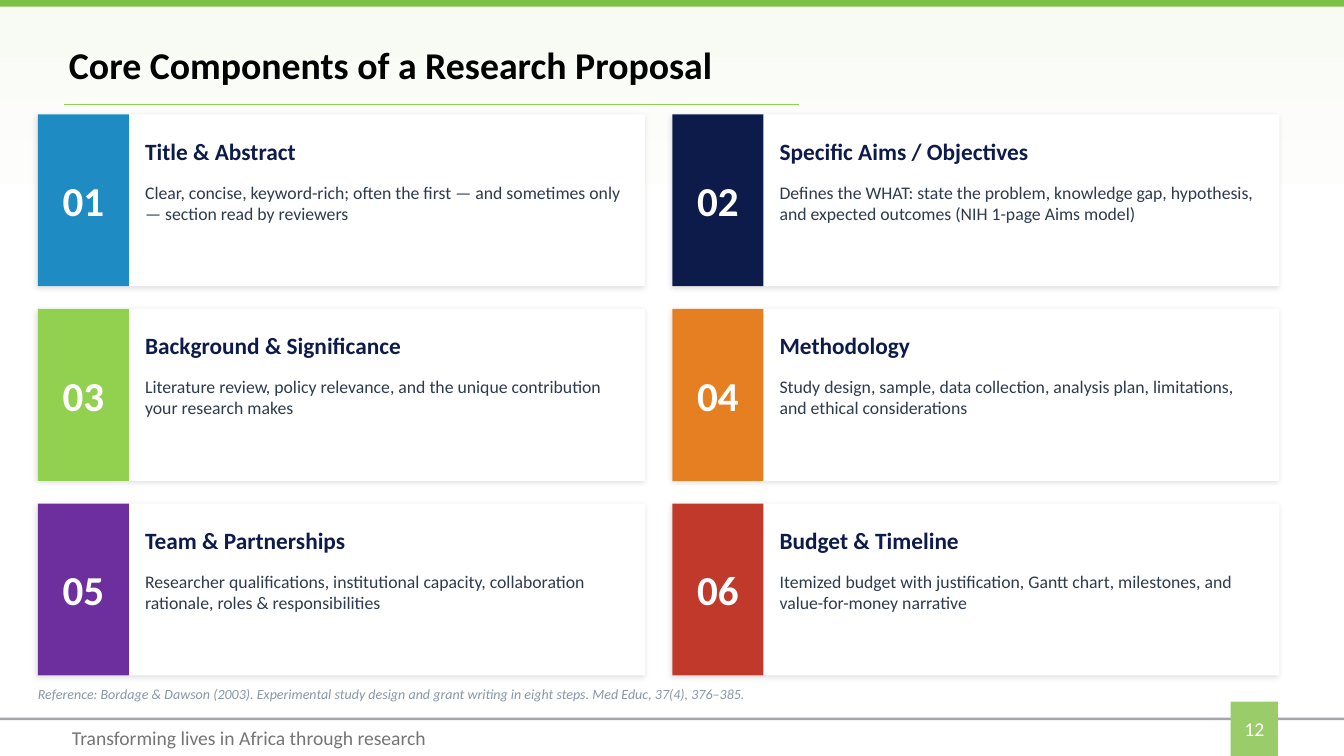
from lxml import etree
from pptx import Presentation
from pptx.dml.color import RGBColor
from pptx.enum.shapes import MSO_CONNECTOR, MSO_SHAPE
from pptx.enum.text import MSO_ANCHOR, PP_ALIGN
from pptx.oxml.ns import qn
from pptx.util import Inches, Pt

RECTANGLE = MSO_SHAPE.RECTANGLE
STRAIGHT = MSO_CONNECTOR.STRAIGHT
TOP, MIDDLE = MSO_ANCHOR.TOP, MSO_ANCHOR.MIDDLE
LEFT, CENTER = PP_ALIGN.LEFT, PP_ALIGN.CENTER

FONT = "Calibri"
SLIDE_WIDTH, SLIDE_HEIGHT = 26.67, 15
GRID_LEFT, GRID_TOP = 0.75, 2.27
COLUMN_PITCH, ROW_PITCH = 12.59, 3.86
CARD_WIDTH, CARD_HEIGHT = 12.05, 3.41
TILE_WIDTH = 1.81
TEXT_OFFSET, TEXT_WIDTH = 2.13, 9.6
PADDING = (0.1, 0.05)

COLORS = {
    "white": "FFFFFF",
    "black": "000000",
    "tint": "F8FBF4",
    "top_bar": "7BC148",
    "rule": "92D050",
    "footer_rule": "A6A4A9",
    "footer_text": "757575",
    "page_tile": "9ACD69",
    "heading": "0D1B4B",
    "body": "2E3A4E",
    "reference": "8896A8",
    "blue": "1E8BC3",
    "navy": "0D1B4B",
    "green": "92D050",
    "orange": "E67E22",
    "purple": "6D2E9E",
    "red": "C0392B",
}

CARDS = [
    ("Title & Abstract", "blue",
     "Clear, concise, keyword-rich; often the first — and sometimes only — section read by reviewers"),
    ("Specific Aims / Objectives", "navy",
     "Defines the WHAT: state the problem, knowledge gap, hypothesis, "
     "and expected outcomes (NIH 1-page Aims model)"),
    ("Background & Significance", "green",
     "Literature review, policy relevance, and the unique contribution your research makes"),
    ("Methodology", "orange",
     "Study design, sample, data collection, analysis plan, limitations, and ethical considerations"),
    ("Team & Partnerships", "purple",
     "Researcher qualifications, institutional capacity, collaboration rationale, "
     "roles & responsibilities"),
    ("Budget & Timeline", "red",
     "Itemized budget with justification, Gantt chart, milestones, and value-for-money narrative"),
]


def rgb(name):
    return RGBColor.from_string(COLORS[name])


def add_box(shapes, left, top, width, height, color):
    shape = shapes.add_shape(RECTANGLE, Inches(left), Inches(top), Inches(width), Inches(height))
    shape.shadow.inherit = False
    shape.fill.solid()
    shape.fill.fore_color.rgb = rgb(color)
    shape.line.fill.background()
    return shape


def write(shape, text, size, color, bold=False, italic=False,
          align=LEFT, anchor=MIDDLE, padding=(0, 0)):
    """Set the single paragraph of a shape; padding is horizontal, vertical."""
    frame = shape.text_frame
    frame.word_wrap = True
    frame.vertical_anchor = anchor
    frame.margin_left = frame.margin_right = Inches(padding[0])
    frame.margin_top = frame.margin_bottom = Inches(padding[1])
    paragraph = frame.paragraphs[0]
    paragraph.alignment = align
    run = paragraph.add_run()
    run.text = text
    run.font.name = FONT
    run.font.size = Pt(size)
    run.font.bold = bold
    run.font.italic = italic
    run.font.color.rgb = rgb(color)
    return paragraph


def add_text(shapes, left, top, width, height, *content, **style):
    box = shapes.add_textbox(Inches(left), Inches(top), Inches(width), Inches(height))
    return write(box, *content, **style)


def add_soft_shadow(shape):
    effects = shape._element.spPr.find(qn("a:effectLst"))
    shadow = etree.SubElement(effects, qn("a:outerShdw"), blurRad=str(Pt(8)), dist=str(Pt(3)),
                              dir="8100000", algn="bl", rotWithShape="0")
    color = etree.SubElement(shadow, qn("a:srgbClr"), val=COLORS["black"])
    etree.SubElement(color, qn("a:alpha"), val="12000")


def add_background(shapes):
    """Full-slide tint that fades to white in the top third."""
    background = add_box(shapes, 0, 0, SLIDE_WIDTH, SLIDE_HEIGHT, "white")
    background.fill.gradient()
    background.fill.gradient_angle = 270
    stops = background.fill.gradient_stops
    for stop, color, position in zip(stops, ("tint", "white"), (0.02, 0.3)):
        stop.color.rgb = rgb(color)
        stop.position = position


def add_title(shapes):
    rule = shapes.add_connector(STRAIGHT, Inches(1.27), Inches(2.07), Inches(15.85), Inches(2.07))
    rule.line.color.rgb = rgb("rule")
    rule.line.width = Pt(1)
    etree.SubElement(rule._element.spPr, qn("a:effectLst"))
    title = add_text(shapes, 1.27, 0.83, 24.22, 1.02, "Core Components of a Research Proposal",
                     54, "black", bold=True, padding=PADDING)
    title.line_spacing = 0.9


def add_footer(shapes):
    add_box(shapes, 0, 14.24, SLIDE_WIDTH, 0.05, "footer_rule")
    add_text(shapes, 1.33, 14.24, 9, 0.8, "Transforming lives in Africa through research",
             28, "footer_text", padding=PADDING)
    page_tile = add_box(shapes, 24.42, 13.92, 0.94, 1.08, "page_tile")
    write(page_tile, "12", 28, "white", align=CENTER, padding=PADDING)


def add_card(slide, index, heading, color, body):
    row, column = divmod(index, 2)
    left = GRID_LEFT + column * COLUMN_PITCH
    top = GRID_TOP + row * ROW_PITCH
    shapes = slide.shapes.add_group_shape().shapes
    add_soft_shadow(add_box(shapes, left, top, CARD_WIDTH, CARD_HEIGHT, "white"))
    tile = add_box(shapes, left, top, TILE_WIDTH, CARD_HEIGHT, color)
    write(tile, f"{index + 1:02d}", 58.7, "white", bold=True, align=CENTER)
    text_left = left + TEXT_OFFSET
    add_text(shapes, text_left, top + 0.16, TEXT_WIDTH, 1.12, heading, 33.3, "heading", bold=True)
    add_text(shapes, text_left, top + 1.33, TEXT_WIDTH, 1.92, body, 25.3, "body", anchor=TOP)


def main():
    presentation = Presentation()
    presentation.slide_width = Inches(SLIDE_WIDTH)
    presentation.slide_height = Inches(SLIDE_HEIGHT)
    slide = presentation.slides.add_slide(presentation.slide_layouts[6])
    add_background(slide.shapes)
    add_box(slide.shapes, 0, 0, SLIDE_WIDTH, 0.13, "top_bar")
    add_title(slide.shapes)
    add_footer(slide.shapes)
    for index, card in enumerate(CARDS):
        add_card(slide, index, *card)
    add_text(slide.shapes, 0.75, 13.47, 25.33, 0.59,
             "Reference: Bordage & Dawson (2003). Experimental study design and grant writing "
             "in eight steps. Med Educ, 37(4), 376–385.", 20, "reference", italic=True)
    presentation.save("out.pptx")


if __name__ == "__main__":
    main()
